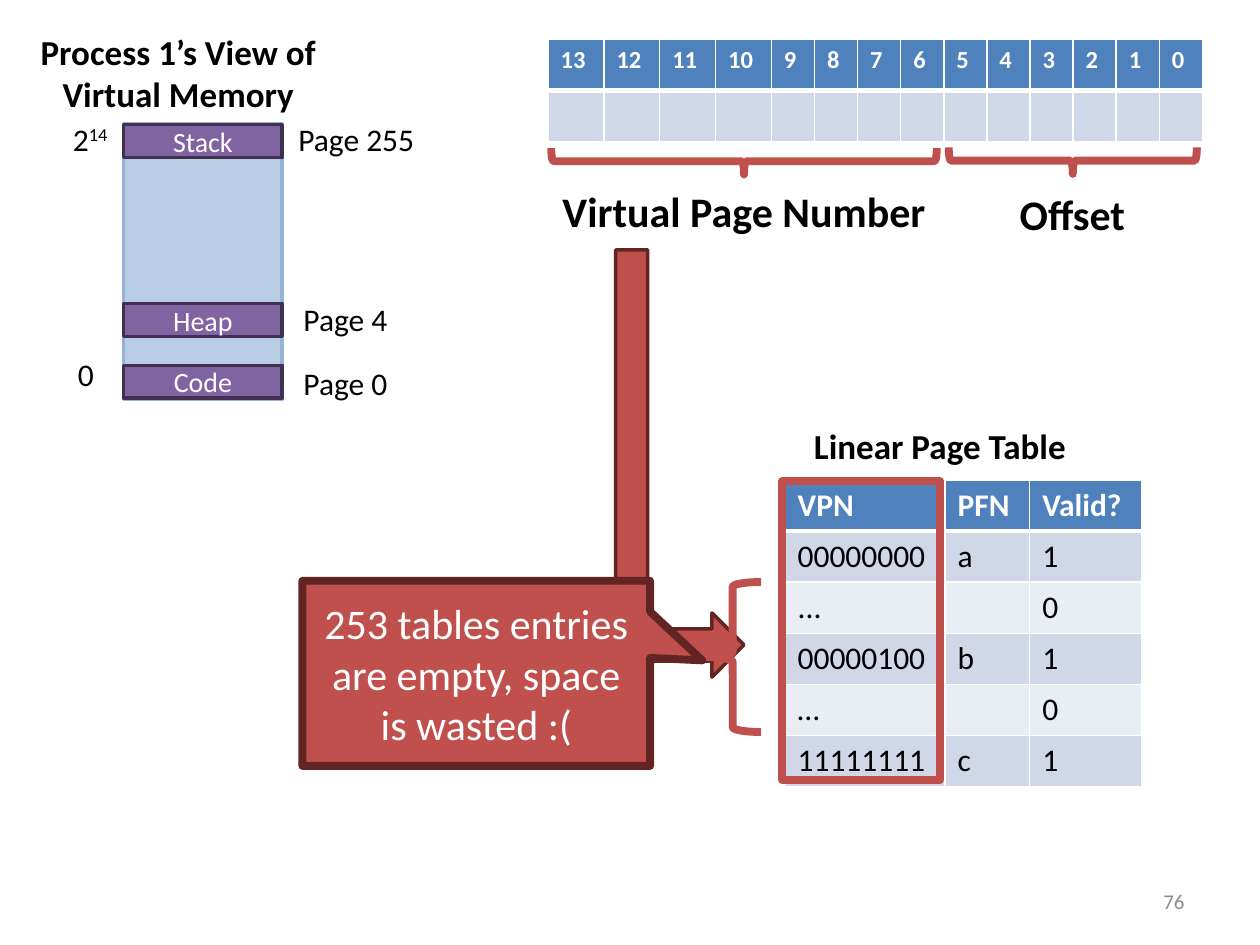
from lxml import etree
from pptx import Presentation
from pptx.dml.color import RGBColor
from pptx.enum import shapes, text
from pptx.oxml import ns
from pptx.util import Pt

RED, DARK, WHITE, BLACK = "C0504D", "632523", "FFFFFF", "000000"
HEAD, BANDS = "4F81BD", ("D0D8E8", "E9EDF4")
KIND, ALIGN = shapes.MSO_SHAPE, text.PP_ALIGN
MID, TOP = text.MSO_ANCHOR.MIDDLE, text.MSO_ANCHOR.TOP
ROW = 29.2

BITS = [[str(n) for n in range(13, -1, -1)], [""] * 14]
PAGES = [
    ["VPN", "PFN", "Valid?"],
    ["00000000", "a", "1"],
    ["...", "", "0"],
    ["00000100", "b", "1"],
    ["…", "", "0"],
    ["11111111", "c", "1"],
]
TITLES = [
    (["Linear Page Table"], (457.2, 239, 159.8, 31.5), 20),
    (["Process 1’s View of", "Virtual Memory"], (15.1, 13.7, 173.5, 55.7), 20),
    (["Offset"], (574.6, 104.4, 76.3, 36.3), 24),
    (["Virtual Page Number"], (313.2, 102.2, 223.9, 36.3), 24),
]
LABELS = [
    ("0", "", (37.4, 199.4, 23.8, 29)),
    ("2", "14", (34.6, 64.8, 36, 29)),
    ("Page 0", "", (166.3, 204.5, 63.4, 29)),
    ("Page 4", "", (166.3, 167.8, 63.4, 29)),
    ("Page 255", "", (163.4, 64.8, 81.4, 29)),
]
PARTS = [("Stack", 71.3), ("Heap", 173.5), ("Code", 208.8)]
BRACES = [(605.5, 20.9, 15.1, 141.8), (417.6, -18, 15.1, 220.3)]
NOTE = "253 tables entries are empty, space is wasted :("

deck = Presentation()
deck.slide_width, deck.slide_height = Pt(720), Pt(540)
slide = deck.slides.add_slide(deck.slide_layouts[6])


def rgb(code):
    return RGBColor.from_string(code)


def put(para, words, size, color=BLACK, bold=False, align=ALIGN.LEFT):
    para.alignment = align
    run = para.add_run()
    run.text = words
    font = run.font
    font.name, font.size, font.bold = "Calibri", Pt(size), bold
    font.color.rgb = rgb(color)
    return run


def shape(kind, box, fill, line, width, turn=0):
    item = slide.shapes.add_shape(kind, *map(Pt, box))
    item.shadow.inherit = False
    item.rotation = turn
    if fill:
        item.fill.solid()
        item.fill.fore_color.rgb = rgb(fill)
    else:
        item.fill.background()
    item.line.color.rgb = rgb(line)
    item.line.width = Pt(width)
    return item


def frame(box, wrap=False, anchor=TOP):
    body = slide.shapes.add_textbox(*map(Pt, box)).text_frame
    body.word_wrap, body.vertical_anchor = wrap, anchor
    return body


def edge(cell, thick):
    prop = cell._tc.get_or_add_tcPr()
    for spot, side in enumerate("LRTB"):
        width = thick if side == "B" else 1
        line = etree.Element(ns.qn("a:ln" + side), w=str(Pt(width)))
        fill = etree.SubElement(line, ns.qn("a:solidFill"))
        etree.SubElement(fill, ns.qn("a:srgbClr"), val=WHITE)
        prop.insert(spot, line)


def table(data, left, top, cols, size):
    box = (left, top, sum(cols), ROW * len(data))
    grid = slide.shapes.add_table(len(data), len(cols), *map(Pt, box)).table
    for col, width in zip(grid.columns, cols):
        col.width = Pt(width)
    for r, row in enumerate(data):
        grid.rows[r].height = Pt(ROW)
        for c, words in enumerate(row):
            cell = grid.cell(r, c)
            cell.fill.solid()
            cell.fill.fore_color.rgb = rgb(BANDS[(r - 1) % 2] if r else HEAD)
            edge(cell, 1 if r else 3)
            if words:
                color = BLACK if r else WHITE
                put(cell.text_frame.paragraphs[0], words, size, color, r == 0)


def title(lines, box, size):
    body = frame(box)
    for n, words in enumerate(lines):
        para = body.add_paragraph() if n else body.paragraphs[0]
        put(para, words, size, bold=True, align=ALIGN.CENTER)


def fill_in(item, words, size):
    body = item.text_frame
    body.word_wrap, body.vertical_anchor = True, MID
    put(body.paragraphs[0], words, size, WHITE, align=ALIGN.CENTER)


foot = frame((516, 500.5, 168, 28.8), True, MID)
put(foot.paragraphs[0], "76", 12, "8C8C8C", align=ALIGN.RIGHT)

table(PAGES, 448.6, 274.3, [91.4, 48.4, 63.9], 18)
table(BITS, 313.2, 22.4, [31.9] * 4 + [24.65] * 10, 14)

shape(KIND.RECTANGLE, (70.6, 70.6, 90.7, 157.7), "B9CDE5", "95B3D7", 2)
for name, top in PARTS:
    box = (70.6, top, 90.7, 18.7)
    fill_in(shape(KIND.RECTANGLE, box, "8064A2", "403152", 2), name, 16)

for item in TITLES:
    title(*item)
for words, power, box in LABELS:
    para = frame(box).paragraphs[0]
    put(para, words, 18)
    if power:
        put(para, power, 18).font._element.set("baseline", "30000")

for box in BRACES:
    shape(KIND.LEFT_BRACE, box, None, RED, 4.5, 270)
shape(KIND.BENT_UP_ARROW, (266.4, 228.2, 244.1, 73.4), RED, DARK, 2, 90)
shape(KIND.FLOWCHART_PROCESS, (447.1, 275, 90, 170.6), None, RED, 4.5)
shape(KIND.LEFT_BRACE, (402.5, 332.6, 32.4, 85.7), None, RED, 4.5)

note = shape(KIND.RECTANGULAR_CALLOUT, (172.8, 331.9, 198.7, 105.8), RED, DARK, 4.5)
note.adjustments[0], note.adjustments[1] = 0.65, -0.07
fill_in(note, NOTE, 24)

deck.save("out.pptx")
